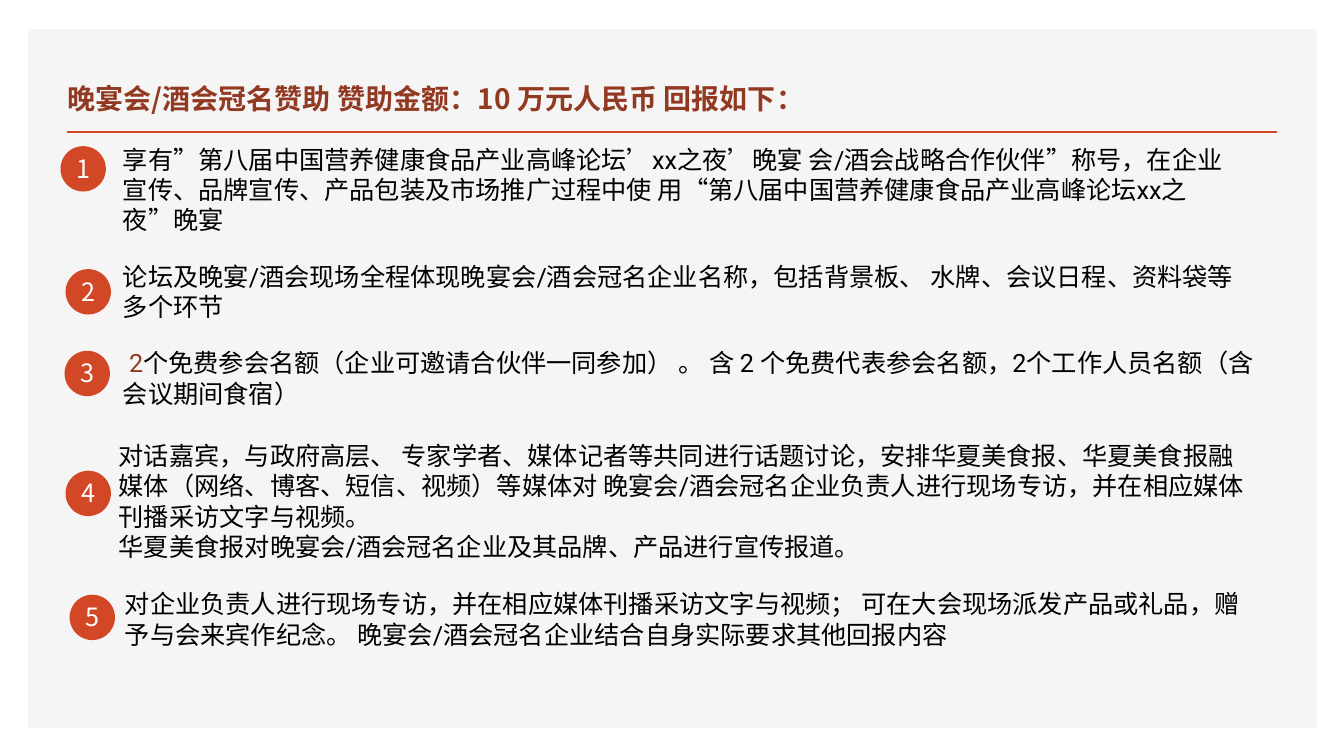
from pptx import Presentation
from pptx.dml.color import RGBColor
from pptx.enum.shapes import MSO_CONNECTOR as CONN, MSO_SHAPE as SHAPE
from pptx.enum.text import MSO_ANCHOR as ANCHOR, MSO_AUTO_SIZE as AUTO, PP_ALIGN as ALIGN
from pptx.oxml.ns import qn
from pptx.util import Inches, Pt
from lxml.etree import SubElement

PANEL = RGBColor(0xF5, 0xF5, 0xF5)
ORANGE = RGBColor(0xD2, 0x47, 0x26)
BROWN = RGBColor(0x92, 0x39, 0x22)
BLACK = RGBColor(0, 0, 0)
WHITE = RGBColor(0xFF, 0xFF, 0xFF)
CJK = "Noto Sans CJK SC"
LATIN = "Roboto"

TITLE = "晚宴会/酒会冠名赞助 赞助金额：10 万元人民币 回报如下："
BENEFITS = [
    ((0.6, 1.45), (1.12, 1.38, 11.34, 0.71), [[
        ("享有”第八届中国营养健康食品产业高峰论坛’xx之夜’晚宴 会/酒会战略合作伙伴”称号，"
         "在企业宣传、品牌宣传、产品包装及市场推广过程中使 用“第八届中国营养健康食品产业高峰论坛"
         "xx之夜”晚宴", BLACK)]]),
    ((0.65, 2.67), (1.12, 2.54, 11.33, 0.71), [[
        ("论坛及晚宴/酒会现场全程体现晚宴会/酒会冠名企业名称，包括背景板、 水牌、会议日程、"
         "资料袋等多个环节", BLACK)]]),
    ((0.64, 3.48), (1.12, 3.4, 11.55, 0.71), [[
        (" 2", BROWN),
        ("个免费参会名额（企业可邀请合伙伴一同参加） 。 含 2 个免费代表参会名额，"
         "2个工作人员名额（含会议期间食宿）", BLACK)]]),
    ((0.65, 4.67), (1.08, 4.32, 11.47, 1.31), [
        [("对话嘉宾，与政府高层、 专家学者、媒体记者等共同进行话题讨论，安排华夏美食报、"
          "华夏美食报融媒体（网络、博客、短信、视频）等媒体对 晚宴会/酒会冠名企业负责人进行现场专访，"
          "并在相应媒体刊播采访文字与视频。", BLACK)],
        [("华夏美食报对晚宴会/酒会冠名企业及其品牌、产品进行宣传报道。", BLACK)]]),
    ((0.69, 5.9), (1.14, 5.79, 11.46, 0.71), [[
        ("对企业负责人进行现场专访，并在相应媒体刊播采访文字与视频； 可在大会现场派发产品或礼品，"
         "赠予与会来宾作纪念。 晚宴会/酒会冠名企业结合自身实际要求其他回报内容", BLACK)]]),
]


class SlideBuilder:
    text_format = {"size": Pt(18), "name": LATIN, "bold": False}

    def __init__(self, slide):
        self.s = slide

    def add_paragraphs(self, tf, paragraphs, align=ALIGN.LEFT, **changes):
        tf.word_wrap = True
        for i, runs in enumerate(paragraphs):
            p = tf.add_paragraph() if i else tf.paragraphs[0]
            p.alignment = align
            for text, color in runs:
                r = p.add_run()
                r.text = text
                for key, value in {**self.text_format, **changes}.items():
                    setattr(r.font, key, value)
                r.font.color.rgb = color
                SubElement(r._r.get_or_add_rPr(), qn("a:ea")).set("typeface", CJK)

    def shape(self, shapes, kind, box, color):
        sp = shapes.add_shape(kind, *map(Inches, box))
        sp.shadow.inherit = False
        sp.fill.solid()
        sp.fill.fore_color.rgb = color
        sp.line.fill.background()
        return sp

    def title(self, text, box):
        sp = self.s.shapes.title
        for key, value in zip(("left", "top", "width", "height"), box):
            setattr(sp, key, Inches(value))
        tf = sp.text_frame
        tf.auto_size = AUTO.NONE
        tf.vertical_anchor = ANCHOR.BOTTOM
        self.add_paragraphs(tf, [[(text, BROWN)]], size=Pt(20), name=CJK, bold=True)

    def panel(self, box):
        sp = self.shape(self.s.shapes, SHAPE.RECTANGLE, box, PANEL)
        self.s.shapes.title.element.addprevious(sp.element)

    def rule(self, x1, x2, y):
        line = self.s.shapes.add_connector(CONN.STRAIGHT, *map(Inches, (x1, y, x2, y)))
        line.line.color.rgb = ORANGE
        line.line.width = Pt(2)
        SubElement(line.element.spPr, qn("a:effectLst"))

    def text(self, shapes, box, paragraphs, **options):
        tf = shapes.add_textbox(*map(Inches, box)).text_frame
        self.add_paragraphs(tf, paragraphs, **options)
        tf.auto_size = AUTO.SHAPE_TO_FIT_TEXT

    def badge(self, number, left, top):
        shapes = self.s.shapes.add_group_shape().shapes
        self.shape(shapes, SHAPE.OVAL, (left, top, 0.45, 0.45), ORANGE)
        self.text(shapes, (left - 0.08, top + 0.02, 0.61, 0.4),
                  [[(str(number), WHITE)]], align=ALIGN.CENTER, name=CJK)


def main():
    prs = Presentation()
    prs.slide_width, prs.slide_height = Inches(13.33), Inches(7.5)
    sb = SlideBuilder(prs.slides.add_slide(prs.slide_layouts[5]))
    sb.panel((0.28, 0.29, 12.78, 6.93))
    sb.title(TITLE, (0.57, 0.49, 7.52, 0.7))
    sb.rule(0.66, 12.67, 1.31)
    for number, (spot, box, paragraphs) in enumerate(BENEFITS, 1):
        sb.badge(number, *spot)
        sb.text(sb.s.shapes, box, paragraphs)
    prs.save("out.pptx")


if __name__ == "__main__":
    main()
